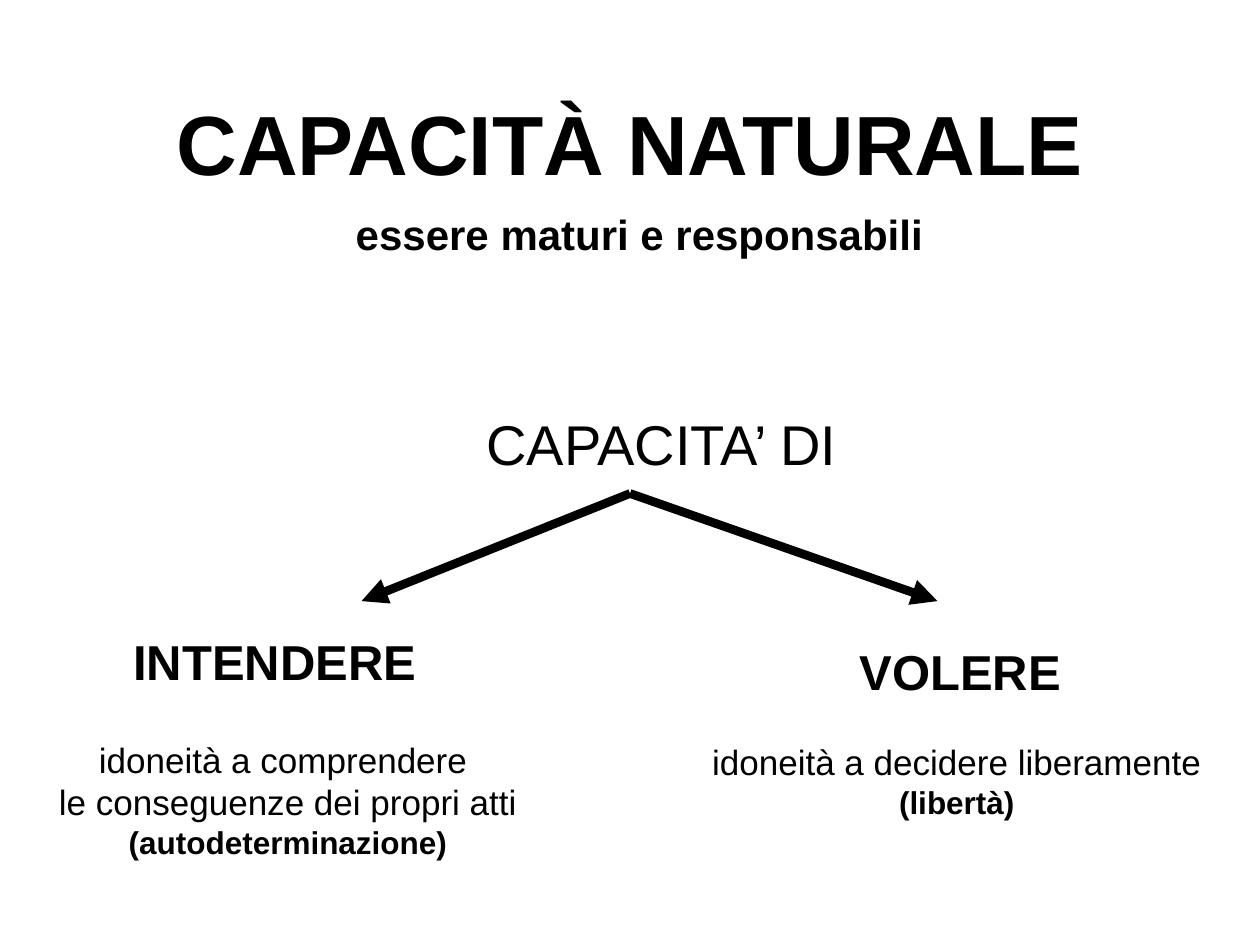
from lxml import etree
from pptx import Presentation
from pptx.dml.color import RGBColor
from pptx.enum.shapes import MSO_CONNECTOR, MSO_SHAPE
from pptx.enum.text import MSO_ANCHOR, PP_ALIGN
from pptx.oxml.ns import qn
from pptx.util import Pt

STRAIGHT = MSO_CONNECTOR.STRAIGHT
RECTANGLE = MSO_SHAPE.RECTANGLE
MIDDLE = MSO_ANCHOR.MIDDLE
CENTER = PP_ALIGN.CENTER
BLACK, WHITE = "000000", "FFFFFF"
BOX_HEIGHT = 90
FORK = (360, 282)
BRANCH_TIPS = [(535.7, 343.5), (206.6, 343.5)]


def color(value):
    """Turn a hex string into a colour."""
    return RGBColor.from_string(value)


def write(frame, paragraphs, size=20, bold=False, wrap=True):
    """Fill a frame with centred paragraphs, each a list of lines (text, format)."""
    frame.word_wrap = wrap
    frame.vertical_anchor = MIDDLE
    for index, lines in enumerate(paragraphs):
        paragraph = frame.add_paragraph() if index else frame.paragraphs[0]
        paragraph.alignment = CENTER
        for number, (text, style) in enumerate(lines):
            if number:
                paragraph.add_line_break()
            run = paragraph.add_run()
            run.text = text
            run.font.name = "Arial"
            run.font.size = Pt(style.get("size", size))
            run.font.bold = style.get("bold", bold)
            run.font.color.rgb = color(BLACK)


def add_title(slide, text):
    """Place and format the title."""
    title = slide.shapes.title
    title.left, title.top, title.width, title.height = Pt(36), Pt(36), Pt(648), Pt(BOX_HEIGHT)
    write(title.text_frame, [[(text, {})]], size=48, bold=True)


def add_label(slide, left, top, width, paragraphs, **style):
    """Add a text box of the common height."""
    label = slide.shapes.add_textbox(Pt(left), Pt(top), Pt(width), Pt(BOX_HEIGHT))
    write(label.text_frame, paragraphs, **style)


def add_subtitle(slide, text):
    """Add the white band with the subtitle."""
    band = slide.shapes.add_shape(RECTANGLE, Pt(167), Pt(122.4), Pt(396.7), Pt(22.3))
    band.shadow.inherit = False
    band.fill.solid()
    band.fill.fore_color.rgb = color(WHITE)
    band.line.color.rgb = color(WHITE)
    band.line.width = Pt(0.75)
    write(band.text_frame, [[(text, {})]], size=24, bold=True, wrap=False)


def add_arrow(slide, start, end):
    """Draw a thick arrow between two points."""
    arrow = slide.shapes.add_connector(STRAIGHT, *map(Pt, start + end))
    arrow.line.color.rgb = color(BLACK)
    arrow.line.width = Pt(5)
    etree.SubElement(arrow.line._get_or_add_ln(), qn("a:tailEnd"), type="triangle")
    etree.SubElement(arrow._element.spPr, qn("a:effectLst"))


def main():
    """Build the slide and save it."""
    deck = Presentation()
    deck.slide_width, deck.slide_height = Pt(720), Pt(540)
    slide = deck.slides.add_slide(deck.slide_layouts[5])
    note = {"size": 18, "bold": True}

    add_title(slide, "CAPACITÀ NATURALE")
    add_label(slide, 54, 208, 648, [[("CAPACITA’ DI", {})]], size=32)
    for tip in BRANCH_TIPS:
        add_arrow(slide, FORK, tip)
    add_label(slide, 4, 332.6, 306, [[("INTENDERE", {})]], size=28, bold=True)
    add_label(slide, 399.6, 338.4, 306, [[("VOLERE ", {})]], size=28, bold=True)
    add_label(slide, 2.9, 411.8, 323.3, [
        [("idoneità a comprendere ", {})],
        [("le conseguenze dei propri atti", {}), ("(autodeterminazione)", note)],
    ])
    add_label(slide, 388, 401, 317.5, [
        [("idoneità a decidere liberamente", {}), ("(libertà)", note)],
    ])
    add_subtitle(slide, "essere maturi e responsabili")
    deck.save("out.pptx")


if __name__ == "__main__":
    main()
